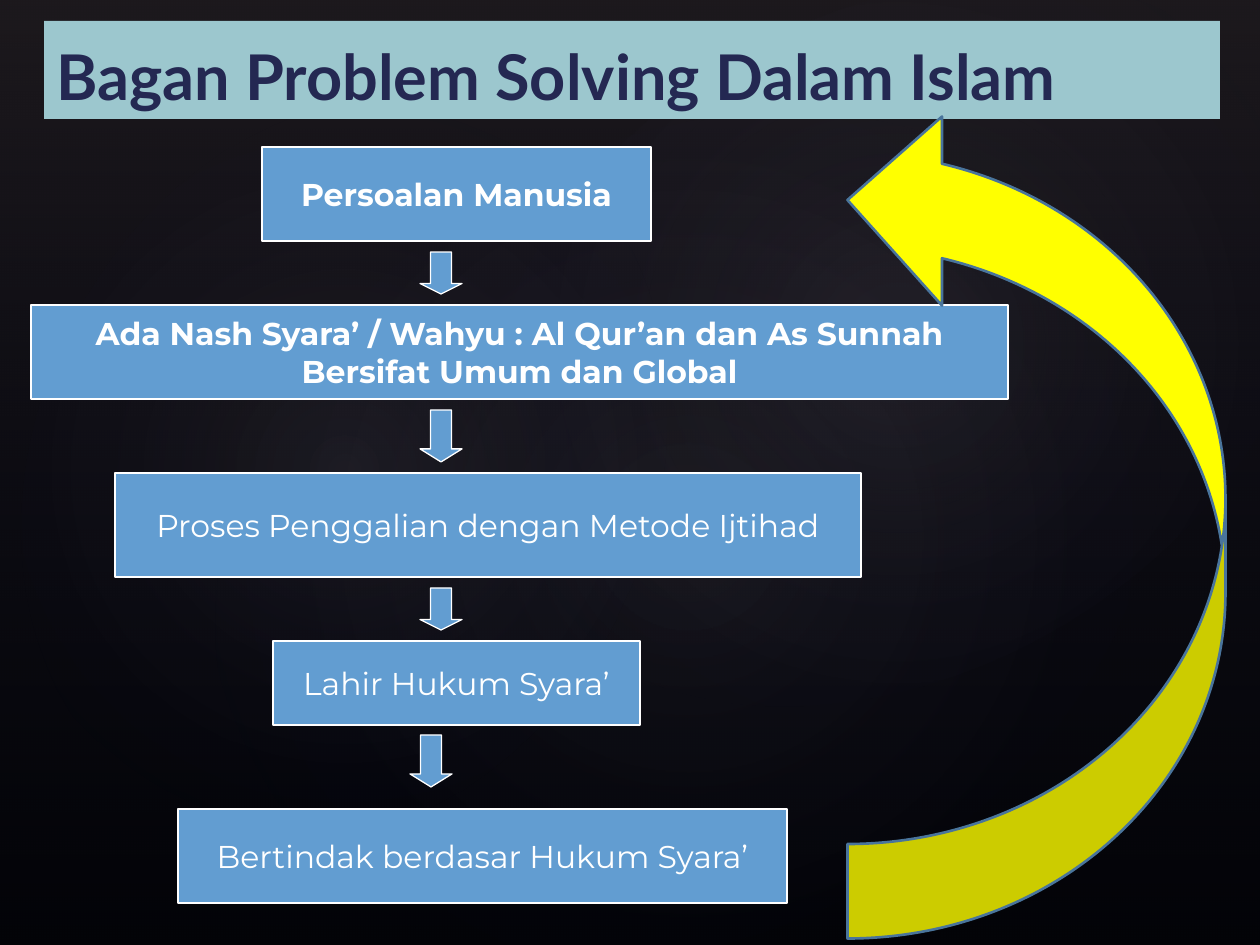
"""Build the slide of the problem-solving flow in Islam."""
from lxml import etree
from pptx import Presentation
from pptx import util as u
from pptx.dml.color import RGBColor
from pptx.enum import shapes, text
from pptx.oxml.ns import nsdecls

SCALE = 914400 / 126
COLOURS = {
    "night": "000000", "dusk": "504652", "navy": "242852", "mist": "C4BCC6",
    "banner": "9CC7CE", "blue": "629DD1", "white": "FFFFFF",
    "yellow": "FFFF00", "edge": "49749B",
}
KIND = shapes.MSO_SHAPE


def add_box(page, kind, frame, words="", fill="blue", line="white", weight=0.75,
            size=18, font="Montserrat", colour="white", bold=False, wrap=False,
            align=text.PP_ALIGN.CENTER, anchor=text.MSO_ANCHOR.MIDDLE):
    box = page.shapes.add_shape(kind, *(u.Emu(round(side * SCALE)) for side in frame))
    box.shadow.inherit = False
    box.fill.solid()
    box.fill.fore_color.rgb = RGBColor.from_string(COLOURS[fill])
    if line:
        box.line.color.rgb = RGBColor.from_string(COLOURS[line])
        box.line.width = u.Pt(weight)
    else:
        box.line.fill.background()
    body = box.text_frame
    body.word_wrap = wrap
    body.vertical_anchor = anchor
    for index, sentence in enumerate(words.split("\n") if words else []):
        para = body.add_paragraph() if index else body.paragraphs[0]
        para.alignment = align
        span = para.add_run()
        span.text = sentence
        span.font.name = font
        span.font.size = u.Pt(size)
        span.font.bold = bold
        span.font.color.rgb = RGBColor.from_string(COLOURS[colour])
    return box


def set_gradient(box, stops, direction):
    marks = "".join(
        f'<a:gs pos="{place * 1000}"><a:srgbClr val="{COLOURS[colour]}">'
        f'<a:alpha val="{alpha * 1000}"/></a:srgbClr></a:gs>'
        for place, colour, alpha in stops)
    gradient = etree.fromstring(
        f'<a:gradFill {nsdecls("a")} rotWithShape="1"><a:gsLst>{marks}</a:gsLst>{direction}</a:gradFill>')
    solid = box.fill._xPr.solidFill if hasattr(box.fill._xPr, "solidFill") else box.fill._xPr.eg_fillProperties
    solid.getparent().replace(solid, gradient)


deck = Presentation()
deck.slide_width = u.Inches(10)
deck.slide_height = u.Inches(7.5)
page = deck.slides.add_slide(deck.slide_layouts[6])
page.background.fill.solid()
page.background.fill.fore_color.rgb = RGBColor.from_string(COLOURS["night"])

veil = add_box(page, KIND.RECTANGLE, (0, 0, 1260, 945), line=None)
set_gradient(veil, [(0, "dusk", 36), (100, "navy", 10)], '<a:lin ang="5400000" scaled="0"/>')

centre = '<a:path path="circle"><a:fillToRect l="50000" t="50000" r="50000" b="50000"/></a:path>'
for frame, turn, alpha in [
    ((189, 144, 998, 786), 328.7, 7),
    ((-38, 161, 764, 617), 294.3, 8),
    ((451, 16, 893, 655), 328.7, 8),
]:
    glow = add_box(page, KIND.OVAL, frame, line=None)
    glow.rotation = turn
    set_gradient(glow, [(0, "mist", alpha), (58, "navy", 0)], centre)

add_box(page, KIND.RECTANGLE, (44, 21, 1176, 98), "Bagan Problem Solving Dalam Islam",
        fill="banner", line=None, size=36, font="Lato", colour="navy", bold=True,
        wrap=True, align=text.PP_ALIGN.LEFT, anchor=text.MSO_ANCHOR.BOTTOM)

for frame, words, bold in [
    ((262, 147, 389, 94), "Persoalan Manusia", True),
    ((31, 305, 977, 94),
     "Ada Nash Syara’ / Wahyu : Al Qur’an dan As Sunnah\nBersifat Umum dan Global", True),
    ((115, 473, 746, 104), "Proses Penggalian dengan Metode Ijtihad", False),
    ((273, 641, 367, 84), "Lahir Hukum Syara’", False),
    ((178, 809, 609, 94), "Bertindak berdasar Hukum Syara’", False),
]:
    add_box(page, KIND.RECTANGLE, frame, words, bold=bold)

for left, top, height in [(420, 252, 42), (420, 410, 52), (420, 588, 42), (410, 735, 52)]:
    arrow = add_box(page, KIND.DOWN_ARROW, (left, top, 42, height))
    arrow.adjustments[0] = 0.5
    arrow.adjustments[1] = 0.25 if height == 42 else 0.31

feedback = add_box(page, KIND.CURVED_UP_ARROW, (620, 333, 833, 378),
                   fill="yellow", line="edge", weight=1.5)
feedback.rotation = 270

deck.save("out.pptx")
